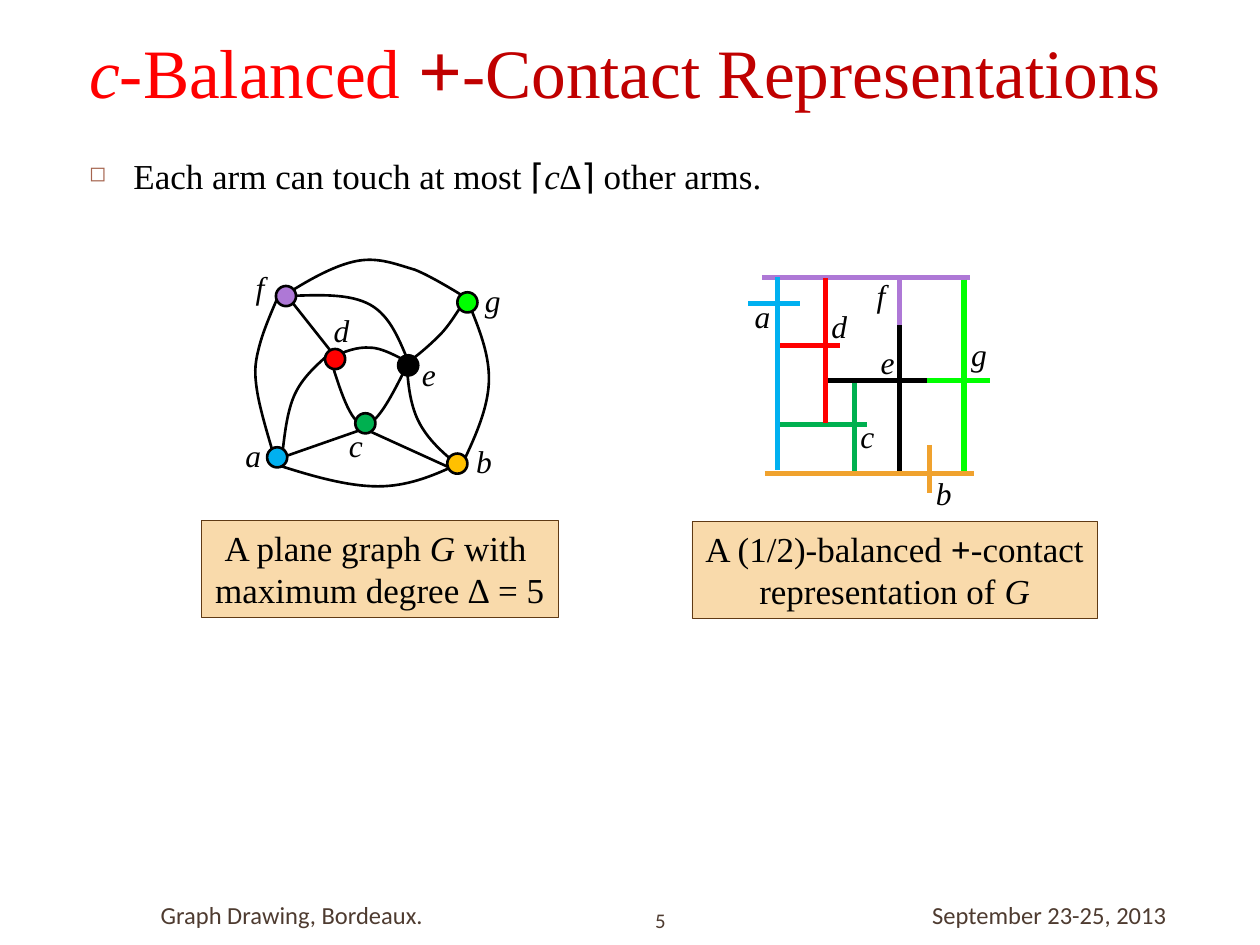
from lxml.etree import SubElement
from pptx import Presentation
from pptx.dml.color import RGBColor
from pptx.enum.shapes import MSO_CONNECTOR, MSO_SHAPE
from pptx.enum.text import MSO_ANCHOR, MSO_AUTO_SIZE, PP_ALIGN
from pptx.oxml.ns import qn
from pptx.util import Cm, Pt

SERIF, SANS = "Times New Roman", "Calibri"
BLACK, RED, DARK_RED, BROWN = "000000", "FF0000", "C00000", "4E3B30"
ITALIC, BOLD = {"italic": True}, {"bold": True}

# Positions are in inches; cm() turns them into lengths.
TITLE = [("c-", {"italic": True, "color": RED}), ("Balanced ", {"color": RED}),
         ("+", {"bold": True, "size": 44.1}), ("-Contact Representations", {})]
BULLET = [("Each arm can touch at most ", {}), ("⌈", {"name": SANS}), ("c", ITALIC),
          ("∆", {}), ("⌉", {"name": SANS}), (" other arms.", {})]
FOOTERS = [  # text, box, size, alignment, left inset
    ("Graph Drawing, Bordeaux. ", (0.67, 7.06, 2.83, 0.4), 14, PP_ALIGN.RIGHT, 0),
    ("5", (5.1, 7.17, 0.58, 0.27), 11.9, PP_ALIGN.LEFT, 0.1),
    ("September 23-25, 2013", (7.3, 7.06, 2.28, 0.4), 14, PP_ALIGN.LEFT, 0.1),
]
CAPTIONS = [
    ((1.6, 4.13, 2.83, 0.77),
     [[("A plane graph ", {}), ("G ", ITALIC), ("with ", {})],
      [("maximum degree ∆ = 5", {})]]),
    ((5.49, 4.14, 3.22, 0.77),
     [[("A (1/2)-balanced ", {}), ("+", BOLD), ("-contact", {})],
      [("representation of ", {}), ("G", ITALIC)]]),
]

NODE_SIZE, LABEL_HEIGHT = 0.16, 0.4
NODES = {  # left, top, fill
    "f": (2.19, 2.27, "AE78D6"), "a": (2.12, 3.55, "00B0F0"),
    "g": (3.63, 2.32, "00FF00"), "b": (3.55, 3.6, "FFC000"),
    "d": (2.58, 2.77, RED), "e": (3.16, 2.82, BLACK), "c": (2.82, 3.28, "00B050"),
}
LABEL_WIDTHS = {"a": 0.34, "b": 0.33, "c": 0.31, "d": 0.34, "e": 0.31, "f": 0.27, "g": 0.33}
GRAPH_LABELS = {"a": (1.85, 3.41), "d": (2.55, 2.42), "f": (1.93, 2.08), "g": (3.75, 2.18),
                "e": (3.25, 2.77), "c": (2.67, 3.33), "b": (3.68, 3.46)}
CONTACT_LABELS = {"g": (7.61, 2.61), "e": (6.89, 2.67), "f": (6.86, 2.14), "d": (6.5, 2.39),
                  "c": (6.73, 3.26), "b": (7.33, 3.71), "a": (5.89, 2.31)}

STRAIGHT_EDGES = [  # f-d, a-c, b-c
    ((2.28, 2.35), (2.66, 2.83)), ((2.24, 3.63), (2.87, 3.41)), ((3.61, 3.73), (2.95, 3.43))]
CURVED_EDGES = [  # start, then two control points and an end for each cubic piece
    [(2.16, 3.57), (2.11, 3.4), (2.06, 3.23), (2.04, 3.1), (2.02, 2.97), (2.02, 2.9),
     (2.05, 2.78), (2.08, 2.65), (2.14, 2.51), (2.2, 2.37)],  # a-f
    [(2.28, 2.33), (2.47, 2.21), (2.67, 2.1), (2.84, 2.07), (3.01, 2.04), (3.15, 2.1),
     (3.29, 2.14), (3.42, 2.19), (3.66, 2.34), (3.66, 2.34)],  # f-g
    [(2.2, 3.69), (2.48, 3.78), (2.76, 3.86), (3, 3.86), (3.23, 3.86), (3.43, 3.78),
     (3.62, 3.69)],  # a-b
    [(3.73, 2.43), (3.81, 2.63), (3.89, 2.83), (3.88, 3.04), (3.87, 3.24), (3.78, 3.45),
     (3.68, 3.66)],  # g-b
    [(2.24, 3.61), (2.26, 3.44), (2.28, 3.26), (2.34, 3.13), (2.4, 3), (2.5, 2.91),
     (2.6, 2.82)],  # a-d
    [(2.29, 2.35), (2.54, 2.34), (2.78, 2.33), (2.94, 2.42), (3.1, 2.51), (3.17, 2.7),
     (3.25, 2.89)],  # f-e
    [(3.62, 3.68), (3.51, 3.59), (3.4, 3.49), (3.33, 3.36), (3.26, 3.23), (3.24, 3.07),
     (3.23, 2.91)],  # b-e
    [(2.62, 2.84), (2.7, 3.1), (2.78, 3.35), (2.88, 3.37), (2.98, 3.39), (3.1, 3.16),
     (3.21, 2.94)],  # d-c-e
    [(2.63, 2.84), (2.73, 2.79), (2.84, 2.75), (2.94, 2.76), (3.05, 2.76), (3.22, 2.87),
     (3.27, 2.89), (3.32, 2.91), (3.28, 2.91), (3.24, 2.9)],  # d-e
    [(3.26, 2.86), (3.34, 2.8), (3.41, 2.74), (3.49, 2.66), (3.56, 2.59), (3.62, 2.49),
     (3.68, 2.4)],  # e-g
]
ARM_COLORS = {name: fill for name, (_, _, fill) in NODES.items()} | {"b": "F0A22E"}
ARMS = [  # vertex, start, end
    ("c", (6.78, 3.01), (6.78, 3.76)), ("d", (6.17, 2.74), (6.67, 2.74)),
    ("a", (5.94, 2.41), (6.35, 2.41)), ("c", (6.17, 3.37), (6.88, 3.37)),
    ("e", (6.57, 3.02), (7.36, 3.02)), ("g", (7.36, 3.02), (7.86, 3.02)),
    ("f", (6.05, 2.2), (7.7, 2.2)), ("a", (6.17, 2.2), (6.17, 3.73)),
    ("d", (6.55, 2.21), (6.55, 3.36)), ("e", (7.14, 2.55), (7.14, 3.74)),
    ("g", (7.65, 2.22), (7.65, 3.77)), ("f", (7.14, 2.2), (7.14, 2.58)),
    ("b", (6.07, 3.76), (7.73, 3.76)), ("b", (7.38, 3.53), (7.38, 3.91)),
]


def cm(*inches):
    return [Cm(2.54 * value) for value in inches]


def rgb(color):
    return RGBColor.from_string(color)


def write(shape, lines, size, color=BLACK, font=SERIF, align=PP_ALIGN.LEFT,
          anchor=MSO_ANCHOR.TOP, wrap=True):
    """Fill a shape with lines of (text, font changes) runs."""
    frame = shape.text_frame
    frame.word_wrap = wrap
    frame.vertical_anchor = anchor
    frame.auto_size = MSO_AUTO_SIZE.NONE if wrap else MSO_AUTO_SIZE.SHAPE_TO_FIT_TEXT
    for index, runs in enumerate(lines):
        paragraph = frame.add_paragraph() if index else frame.paragraphs[0]
        paragraph.alignment = align
        paragraph.font.name, paragraph.font.size = font, Pt(size)
        paragraph.font.color.rgb = rgb(color)
        for text, changes in runs:
            run = paragraph.add_run()
            run.text = text
            run.font.name = changes.get("name", font)
            run.font.size = Pt(changes.get("size", size))
            run.font.color.rgb = rgb(changes.get("color", color))
            run.font.bold, run.font.italic = changes.get("bold"), changes.get("italic")
    return frame


def add_text(slide, box, lines, size, **options):
    return write(slide.shapes.add_textbox(*cm(*box)), lines, size, **options)


def add_bullet(paragraph):
    paragraph.space_before = Pt(7)
    properties = paragraph._p.get_or_add_pPr()
    properties.set("marL", str(Cm(0.89)))
    properties.set("indent", str(-Cm(0.89)))
    bullet_color = SubElement(properties, qn("a:buClr"))
    SubElement(bullet_color, qn("a:srgbClr"), val="A5644E")
    SubElement(properties, qn("a:buSzPct"), val="60000")
    SubElement(properties, qn("a:buChar"), char="◻")
    default_font = properties.find(qn("a:defRPr"))
    properties.append(default_font)  # the schema wants it last


def add_line(slide, start, end, color, width):
    line = slide.shapes.add_connector(MSO_CONNECTOR.STRAIGHT, *cm(*start, *end))
    line.line.color.rgb, line.line.width = rgb(color), Pt(width)
    SubElement(line._element.spPr, qn("a:effectLst"))


def add_curve(slide, points):
    """Draw joined cubic Bézier pieces as one open outline."""
    builder = slide.shapes.build_freeform(*cm(*points[0]))
    builder.add_line_segments([cm(*point) for point in points[1:]], close=False)
    curve = builder.convert_to_shape()
    outline = next(curve._element.iter(qn("a:path")))
    segments = outline.findall(qn("a:lnTo"))
    for first in range(0, len(segments), 3):
        cubic = SubElement(outline, qn("a:cubicBezTo"))
        for segment in segments[first:first + 3]:
            cubic.append(segment[0])
            outline.remove(segment)
    curve.shadow.inherit = False
    curve.fill.background()
    curve.line.color.rgb, curve.line.width = rgb(BLACK), Pt(1.5)


def add_filled(slide, preset, box, fill, line, width):
    shape = slide.shapes.add_shape(preset, *cm(*box))
    shape.shadow.inherit = False
    shape.fill.solid()
    shape.fill.fore_color.rgb = rgb(fill)
    shape.line.color.rgb, shape.line.width = rgb(line), Pt(width)
    return shape


def add_labels(slide, places):
    for name, place in places.items():
        add_text(slide, (*place, LABEL_WIDTHS[name], LABEL_HEIGHT), [[(name, ITALIC)]], 18,
                 wrap=False)


def main():
    deck = Presentation()
    deck.slide_width, deck.slide_height = cm(10, 7.5)
    slide = deck.slides.add_slide(deck.slide_layouts[6])

    add_text(slide, (0.61, 0, 8.92, 1.08), [TITLE], 39.6, color=DARK_RED,
             anchor=MSO_ANCHOR.MIDDLE)
    body = add_text(slide, (0.61, 1.18, 8.92, 4.92), [BULLET], 20)
    add_bullet(body.paragraphs[0])
    for text, box, size, align, inset in FOOTERS:
        footer = add_text(slide, box, [[(text, {})]], size, color=BROWN, font=SANS,
                          align=align, anchor=MSO_ANCHOR.MIDDLE)
        footer.margin_left = Cm(2.54 * inset)

    for points in CURVED_EDGES:
        add_curve(slide, points)
    for start, end in STRAIGHT_EDGES:
        add_line(slide, start, end, BLACK, 1.5)
    for left, top, fill in NODES.values():
        add_filled(slide, MSO_SHAPE.OVAL, (left, top, NODE_SIZE, NODE_SIZE), fill, BLACK, 1.5)
    add_labels(slide, GRAPH_LABELS)

    for name, start, end in ARMS:
        add_line(slide, start, end, ARM_COLORS[name], 3)
    add_labels(slide, CONTACT_LABELS)

    for box, lines in CAPTIONS:
        caption = add_filled(slide, MSO_SHAPE.RECTANGLE, box, "F9DAAB", "603A14", 0.25)
        write(caption, lines, 20, align=PP_ALIGN.CENTER, wrap=False)
    deck.save("out.pptx")


if __name__ == "__main__":
    main()
